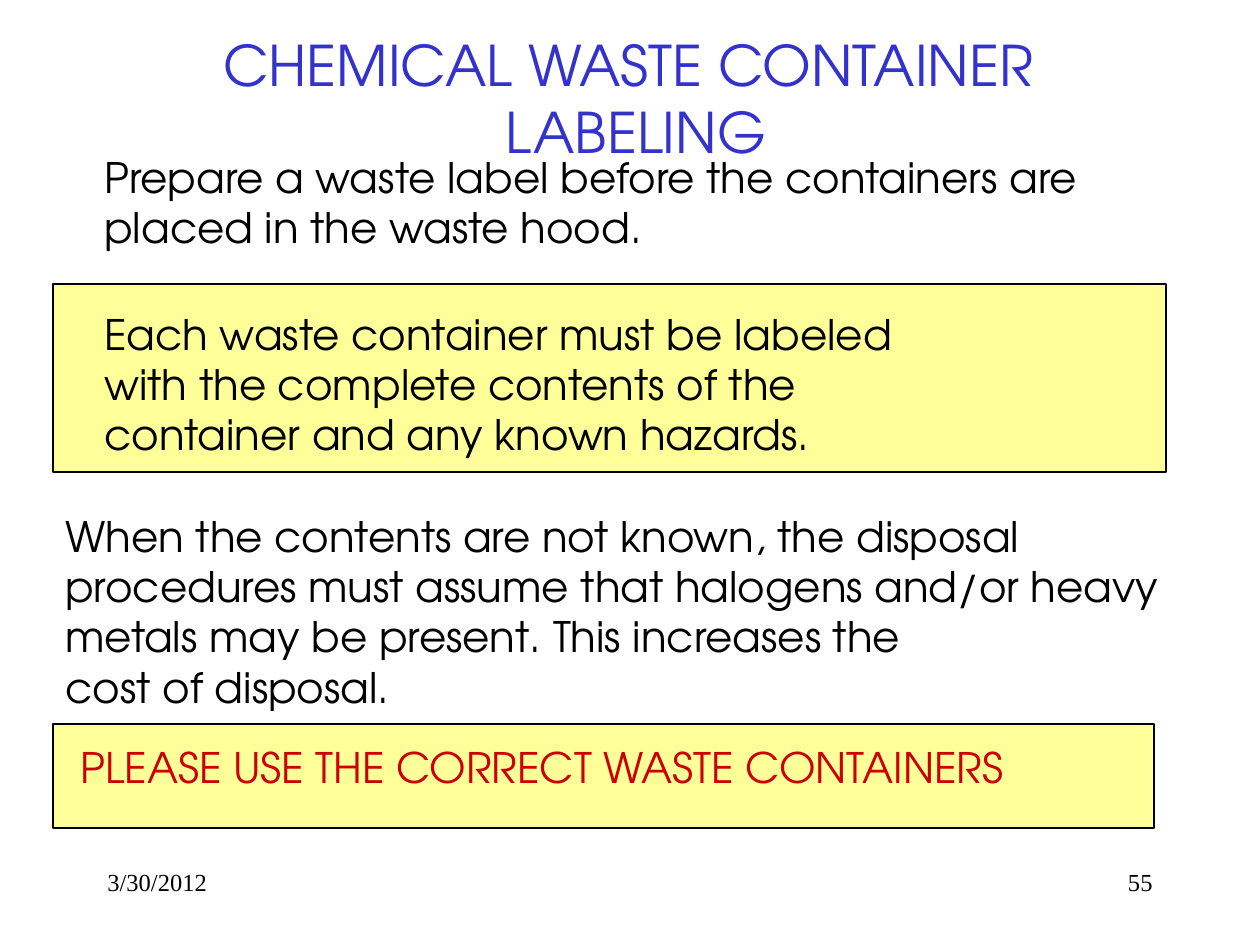
from dataclasses import dataclass

from pptx import Presentation
from pptx.dml.color import RGBColor
from pptx.enum.shapes import MSO_SHAPE
from pptx.enum.text import MSO_ANCHOR, MSO_AUTO_SIZE, PP_ALIGN
from pptx.util import Emu, Pt

RECTANGLE = MSO_SHAPE.RECTANGLE
TOP = MSO_ANCHOR.TOP
NO_AUTOFIT = MSO_AUTO_SIZE.NONE
LEFT, CENTER, RIGHT = PP_ALIGN.LEFT, PP_ALIGN.CENTER, PP_ALIGN.RIGHT

PX_PER_INCH = 126


def px(length: int) -> Emu:
    return Emu(round(length * 914400 / PX_PER_INCH))


@dataclass(frozen=True)
class Theme:
    heading_font: str = "TeX Gyre Adventor"
    footer_font: str = "Times New Roman"
    title_size: int = 32
    body_size: int = 24
    footer_size: int = 14
    title: str = "3333CC"
    ink: str = "000000"
    warning: str = "CC0000"
    panel: str = "FFFF99"


THEME = Theme()


@dataclass(frozen=True)
class Box:
    left: int
    top: int
    width: int
    height: int

    def emu(self) -> tuple[Emu, Emu, Emu, Emu]:
        return px(self.left), px(self.top), px(self.width), px(self.height)


@dataclass(frozen=True)
class Note:
    box: Box
    lines: tuple[str, ...]
    font: str = THEME.heading_font
    size: int = THEME.body_size
    color: str = THEME.ink
    align: PP_ALIGN = LEFT
    wrap: bool = True


TITLE = Note(Box(176, 24, 905, 149), ("CHEMICAL WASTE CONTAINER", " LABELING"),
             size=THEME.title_size, color=THEME.title, align=CENTER, wrap=False)

PANELS = (Box(53, 724, 1101, 104), Box(53, 284, 1113, 188))

NOTES = (
    Note(Box(92, 145, 1084, 115),
         ("Prepare a waste label before the containers are placed in the waste hood.",)),
    Note(Box(92, 302, 815, 165),
         ("Each waste container must be labeled",
          "with the complete contents of the",
          "container and any known hazards."), wrap=False),
    Note(Box(53, 504, 1152, 217),
         ("When the contents are not known, the disposal procedures must assume that "
          "halogens and/or heavy metals may be present. This increases the",
          "cost of disposal.")),
    Note(Box(68, 735, 1108, 64), ("PLEASE USE THE CORRECT WASTE CONTAINERS",),
         color=THEME.warning),
    Note(Box(95, 861, 262, 63), ("3/30/2012",),
         font=THEME.footer_font, size=THEME.footer_size),
    Note(Box(903, 861, 262, 63), ("55",),
         font=THEME.footer_font, size=THEME.footer_size, align=RIGHT),
)


def write(frame, note: Note) -> None:
    frame.text = "\n".join(note.lines)
    frame.auto_size = NO_AUTOFIT
    frame.word_wrap = note.wrap
    frame.vertical_anchor = TOP
    for paragraph in frame.paragraphs:
        paragraph.alignment = note.align
        paragraph.font.name = note.font
        paragraph.font.size = Pt(note.size)
        paragraph.font.color.rgb = RGBColor.from_string(note.color)


def add_panel(slide, box: Box) -> None:
    panel = slide.shapes.add_shape(RECTANGLE, *box.emu())
    panel.shadow.inherit = False
    panel.fill.solid()
    panel.fill.fore_color.rgb = RGBColor.from_string(THEME.panel)
    panel.line.color.rgb = RGBColor.from_string(THEME.ink)
    panel.line.width = Pt(1)


def add_note(slide, note: Note) -> None:
    write(slide.shapes.add_textbox(*note.box.emu()).text_frame, note)


def main() -> None:
    deck = Presentation()
    deck.slide_width, deck.slide_height = px(1260), px(945)
    slide = deck.slides.add_slide(deck.slide_layouts[5])

    # Title
    title = slide.shapes.title
    title.left, title.top, title.width, title.height = TITLE.box.emu()
    write(title.text_frame, TITLE)

    # Highlight panels, then the instructions and footer over them
    for box in PANELS:
        add_panel(slide, box)
    for note in NOTES:
        add_note(slide, note)

    deck.save("out.pptx")


if __name__ == "__main__":
    main()
